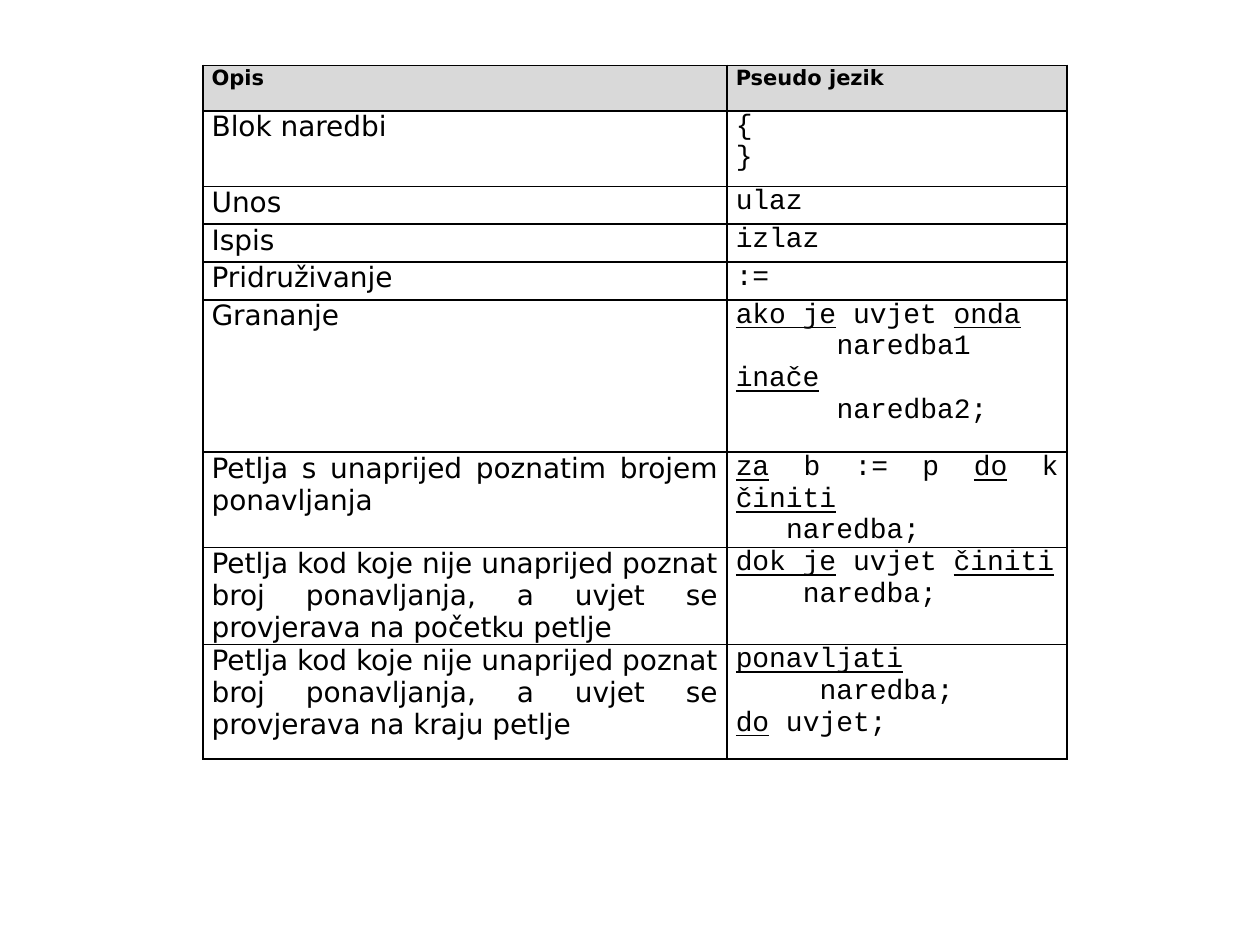
import pptx
import pptx.dml.color
import pptx.enum.text
import pptx.oxml
import pptx.oxml.ns
import pptx.util

COLORS = {"text": "000000", "border": "000000", "header": "D9D9D9"}
FONTS = {"label": "DejaVu Sans", "code": "Courier New"}
ROWS = [
    (4.8, "Opis", ["Pseudo jezik"]),
    (8, "Blok naredbi", ["{", "}"]),
    (4, "Unos", ["ulaz"]),
    (4, "Ispis", ["izlaz"]),
    (4, "Pridruživanje", [":="]),
    (16.13, "Grananje",
     ["_ako je_ uvjet _onda_", (6, "naredba1"), "_inače_", (6, "naredba2;")]),
    (8, "Petlja s unaprijed poznatim brojem ponavljanja",
     ["_za_ b := p _do_ k _činiti_", (3, "naredba;")]),
    (8, "Petlja kod koje nije unaprijed poznat broj ponavljanja, "
     "a uvjet se provjerava na početku petlje",
     ["_dok je_ uvjet _činiti_", (4, "naredba;")]),
    (12.13, "Petlja kod koje nije unaprijed poznat broj ponavljanja, "
     "a uvjet se provjerava na kraju petlje",
     ["_ponavljati_", (5, "naredba;"), "_do_ uvjet;"]),
]


class Deck:
    """Hold the style and current slide; lengths are percentages of the slide size."""

    def __init__(self, width, height):
        self.prs = pptx.Presentation()
        self.prs.slide_width = pptx.util.Inches(width)
        self.prs.slide_height = pptx.util.Inches(height)
        self.s = self.prs.slides.add_slide(self.prs.slide_layouts[6])

    def x(self, share):
        return int(self.prs.slide_width * share / 100)

    def y(self, share):
        return int(self.prs.slide_height * share / 100)

    def borders(self, cell):
        tcPr = cell._tc.get_or_add_tcPr()
        for side in "LRTB":
            tcPr.append(pptx.oxml.parse_xml(
                f'<a:ln{side} {pptx.oxml.ns.nsdecls("a")} w="12700"><a:solidFill>'
                f'<a:srgbClr val="{COLORS["border"]}"/></a:solidFill></a:ln{side}>'))

    def paragraph(self, p, line, font, size, bold):
        indent, text = line if isinstance(line, tuple) else (0, line)
        p.alignment = pptx.enum.text.PP_ALIGN.JUSTIFY
        if indent:
            p._p.get_or_add_pPr().set("marL", str(int(pptx.util.Pt(size * 0.6 * indent))))
        for i, part in enumerate(text.split("_")):
            if part:
                r = p.add_run()
                r.text = part
                r.font.name, r.font.size = font, pptx.util.Pt(size)
                r.font.bold, r.font.underline = bold, i % 2 == 1
                r.font.color.rgb = pptx.dml.color.RGBColor.from_string(COLORS["text"])

    def cell(self, cell, lines, font, header):
        cell.margin_left = cell.margin_right = pptx.util.Inches(0.07)
        cell.margin_top = cell.margin_bottom = 0
        self.borders(cell)
        if header:
            cell.fill.solid()
            cell.fill.fore_color.rgb = pptx.dml.color.RGBColor.from_string(COLORS["header"])
        else:
            cell.fill.background()
        tf = cell.text_frame
        for i, line in enumerate(lines):
            p = tf.add_paragraph() if i else tf.paragraphs[0]
            self.paragraph(p, line, font, 12 if header else 16, header)

    def table(self, left, top, widths, rows):
        heights = [row[0] for row in rows]
        table = self.s.shapes.add_table(
            len(rows), len(widths), self.x(left), self.y(top),
            self.x(sum(widths)), self.y(sum(heights))).table
        table.first_row = table.horz_banding = False
        for column, width in zip(table.columns, widths):
            column.width = self.x(width)
        for i, (height, label, code) in enumerate(rows):
            header = i == 0
            table.rows[i].height = self.y(height)
            self.cell(table.cell(i, 0), [label], FONTS["label"], header)
            self.cell(table.cell(i, 1), code, FONTS["label" if header else "code"], header)


def main():
    deck = Deck(10, 7.5)
    deck.table(16.1, 6.93, [41.6, 27], ROWS)
    deck.prs.save("out.pptx")


if __name__ == "__main__":
    main()
